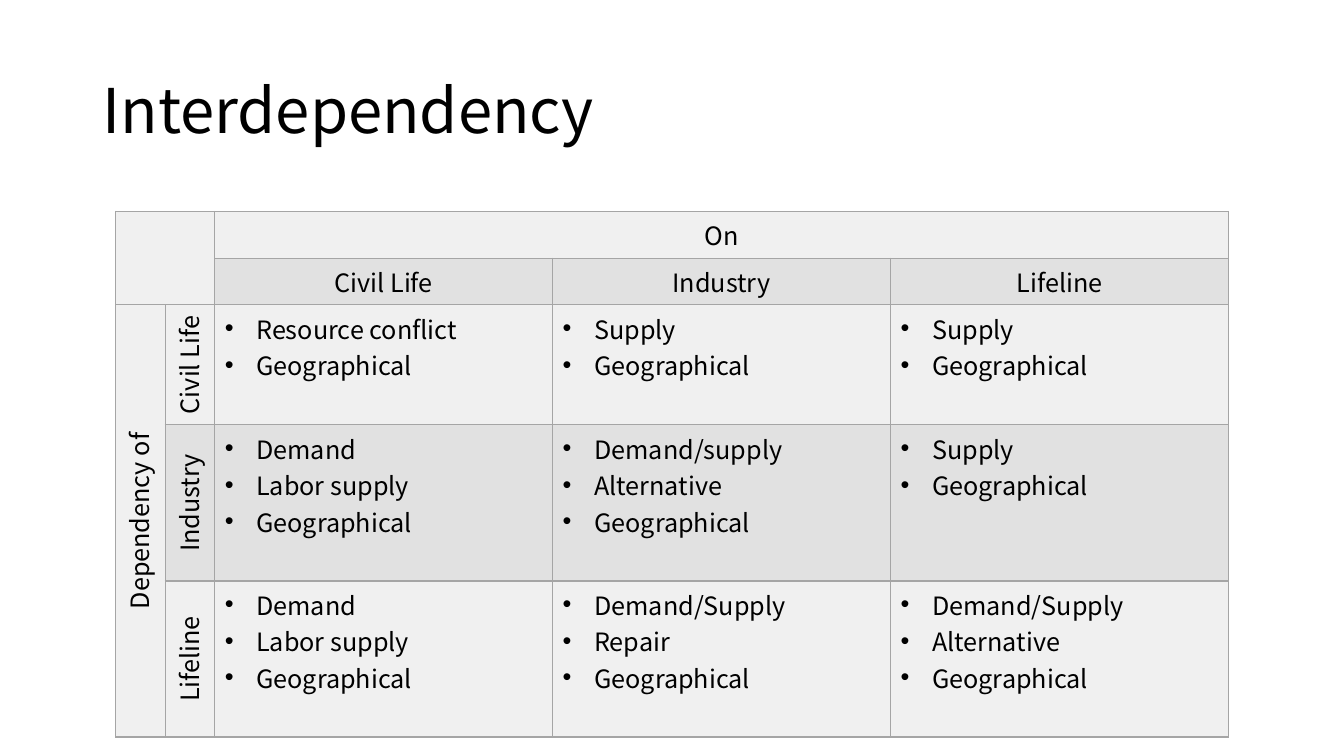
from lxml.etree import SubElement
from pptx import Presentation
from pptx.dml.color import RGBColor
from pptx.enum.text import MSO_ANCHOR, PP_ALIGN
from pptx.oxml.ns import qn
from pptx.util import Pt

COLORS = {"text": "000000", "light": "F0F0F0", "dark": "E1E1E1", "border": "A5A5A5"}
SECTORS = ["Civil Life", "Industry", "Lifeline"]
BANDS = ["light", "dark", "light"]
DEPENDENCIES = [
    [["Resource conflict", "Geographical"],
     ["Supply", "Geographical"],
     ["Supply", "Geographical"]],
    [["Demand", "Labor supply", "Geographical"],
     ["Demand/supply", "Alternative", "Geographical"],
     ["Supply", "Geographical"]],
    [["Demand", "Labor supply", "Geographical"],
     ["Demand/Supply", "Repair", "Geographical"],
     ["Demand/Supply", "Alternative", "Geographical"]],
]


class SlideBuilder:
    font = "Noto Sans CJK JP"
    title_size = 44
    body_size = 18
    bullet_indent = 22.5

    def __init__(self, slide):
        self.slide = slide

    def add_text(self, paragraph, text, size):
        run = paragraph.add_run()
        run.text = text
        run.font.name = self.font
        run.font.size = Pt(size)
        run.font.color.rgb = RGBColor.from_string(COLORS["text"])

    def title(self, text, left, top, width, height):
        heading = self.slide.shapes.title
        heading.left, heading.top = Pt(left), Pt(top)
        heading.width, heading.height = Pt(width), Pt(height)
        frame = heading.text_frame
        frame.word_wrap = True
        frame.vertical_anchor = MSO_ANCHOR.MIDDLE
        paragraph = frame.paragraphs[0]
        paragraph.alignment = PP_ALIGN.LEFT
        paragraph.line_spacing = 0.9
        self.add_text(paragraph, text, self.title_size)

    def table(self, left, top, widths, heights):
        frame = self.slide.shapes.add_table(
            len(heights), len(widths), Pt(left), Pt(top), Pt(sum(widths)), Pt(sum(heights)))
        grid = frame.table
        grid.first_row = grid.horz_banding = False
        for column, width in zip(grid.columns, widths):
            column.width = Pt(width)
        for row, height in zip(grid.rows, heights):
            row.height = Pt(height)
        for cell in grid.iter_cells():
            self.border(cell)
            self.shade(cell, "light")
        return grid

    def border(self, cell):
        properties = cell._tc.get_or_add_tcPr()
        for side in ("a:lnL", "a:lnR", "a:lnT", "a:lnB"):
            line = SubElement(properties, qn(side), w=str(Pt(1)))
            fill = SubElement(line, qn("a:solidFill"))
            SubElement(fill, qn("a:srgbClr"), val=COLORS["border"])

    def shade(self, cell, color):
        cell.fill.solid()
        cell.fill.fore_color.rgb = RGBColor.from_string(COLORS[color])

    def header(self, cell, text, color="light", vertical=False):
        self.shade(cell, color)
        if vertical:
            cell._tc.get_or_add_tcPr().set("vert", "vert270")
        paragraph = cell.text_frame.paragraphs[0]
        paragraph.alignment = PP_ALIGN.CENTER
        self.add_text(paragraph, text, self.body_size)

    def bullets(self, cell, items, color):
        self.shade(cell, color)
        frame = cell.text_frame
        for index, item in enumerate(items):
            paragraph = frame.add_paragraph() if index else frame.paragraphs[0]
            properties = paragraph._p.get_or_add_pPr()
            properties.set("marL", str(Pt(self.bullet_indent)))
            properties.set("indent", str(-Pt(self.bullet_indent)))
            SubElement(properties, qn("a:buFont"), typeface="Arial")
            SubElement(properties, qn("a:buChar"), char="•")
            self.add_text(paragraph, item, self.body_size)


def main():
    deck = Presentation()
    deck.slide_width, deck.slide_height = Pt(960), Pt(540)
    builder = SlideBuilder(deck.slides.add_slide(deck.slide_layouts[5]))
    builder.title("Interdependency", 66, 28.8, 828, 104.4)

    matrix = builder.table(82.6, 151, [35.4] * 2 + [241.4] * 3,
                           [33.4] * 2 + [85.7] + [111.5] * 2)
    matrix.cell(0, 0).merge(matrix.cell(1, 1))
    matrix.cell(0, 2).merge(matrix.cell(0, 4))
    matrix.cell(2, 0).merge(matrix.cell(4, 0))
    builder.header(matrix.cell(0, 2), "On")
    builder.header(matrix.cell(2, 0), "Dependency of", vertical=True)

    for index, (sector, band, dependencies) in enumerate(zip(SECTORS, BANDS, DEPENDENCIES), 2):
        builder.header(matrix.cell(1, index), sector, "dark")
        builder.header(matrix.cell(index, 1), sector, band, vertical=True)
        for column, items in enumerate(dependencies, 2):
            builder.bullets(matrix.cell(index, column), items, band)

    deck.save("out.pptx")


if __name__ == "__main__":
    main()
